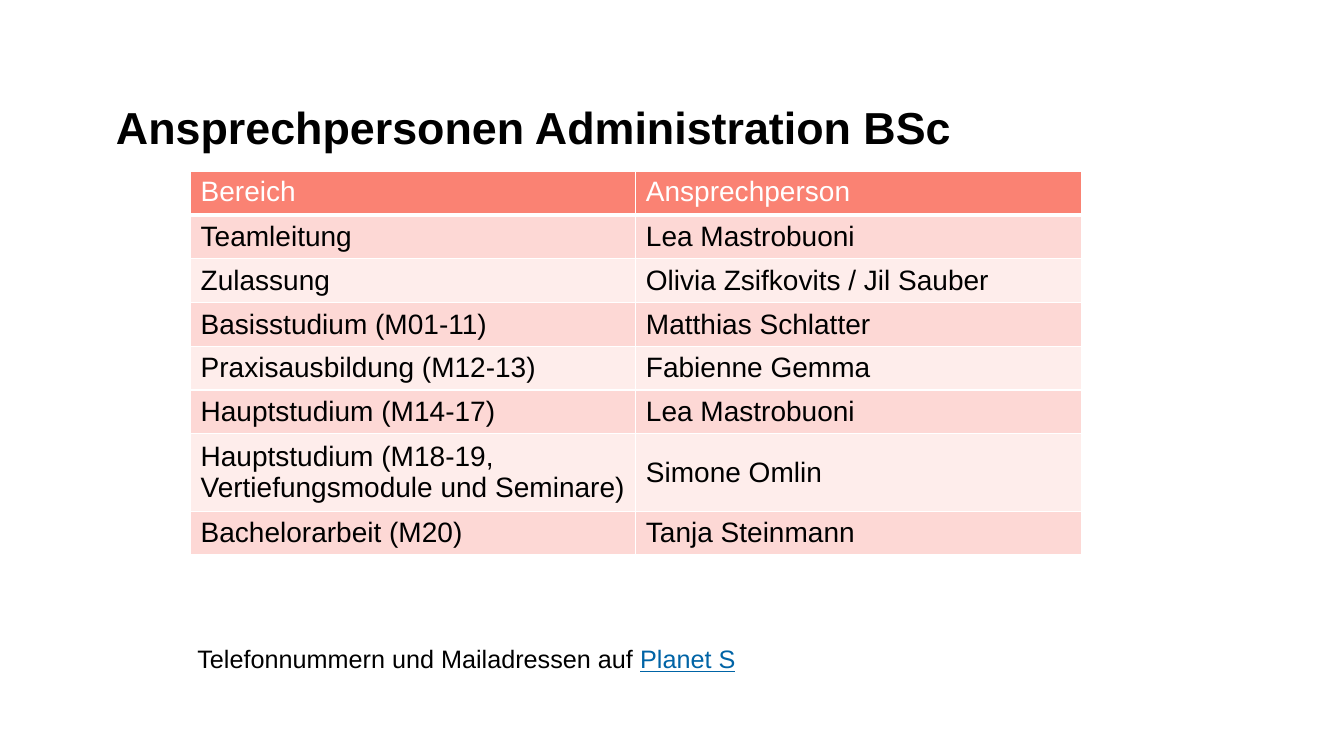
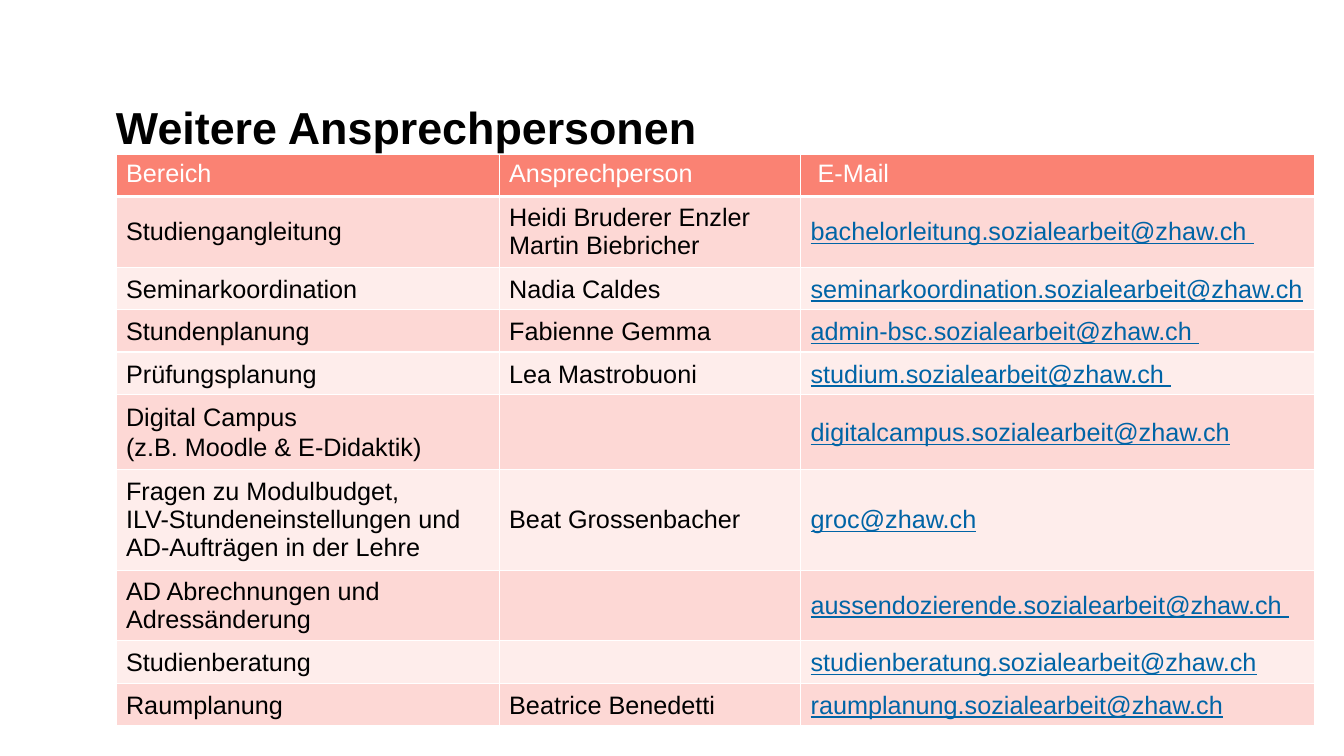
from lxml.etree import SubElement
from pptx import Presentation
from pptx.dml.color import RGBColor
from pptx.enum.text import MSO_ANCHOR
from pptx.oxml.ns import qn
from pptx.util import Inches, Pt

# Shared look
WIDTH, HEIGHT = Inches(13.33), Inches(7.5)
FONT = "Arial"
BLACK, WHITE, LINK = "000000", "FFFFFF", "0064A6"
HEADER_FILL = "FA8273"
BAND_FILLS = ("FDD8D5", "FEEDEB")
MARGIN = 8.63         # left edge of the content, percent of the slide width
LINE_FACTOR = 1.12    # height of a text line relative to its font size
LOOSE = 1.07          # line spacing of the airier rows


def across(percent):
    return round(WIDTH * percent / 100)


def down(percent):
    return round(HEIGHT * percent / 100)


def color(hex_code):
    return RGBColor.from_string(hex_code)


def write(paragraph, text, size=18, ink=BLACK, bold=False, underline=False):
    """Append text to a paragraph; a newline becomes a line break."""
    for number, line in enumerate(text.split("\n")):
        if number:
            paragraph.add_line_break()
        run = paragraph.add_run()
        run.text = line
        run.font.name = FONT
        run.font.size = Pt(size)
        run.font.bold = bold
        run.font.underline = underline
        run.font.color.rgb = color(ink)


def add_text_line(slide, left, top, width, height, inset=None):
    box = slide.shapes.add_textbox(across(left), down(top), across(width), down(height))
    frame = box.text_frame
    frame.word_wrap = True
    if inset is not None:
        frame.margin_left = frame.margin_right = inset
        frame.margin_top = frame.margin_bottom = inset
    return frame.paragraphs[0]


def add_titled_slide(deck, title):
    slide = deck.slides.add_slide(deck.slide_layouts[6])
    paragraph = add_text_line(slide, MARGIN, 14.27, 79.67, 12.13, inset=0)
    paragraph.line_spacing = 0.85
    write(paragraph, title, size=32, bold=True)
    return slide


def style_cell(cell, fill, bottom_width=1):
    """White borders first, then the fill, as the file format orders them."""
    properties = cell._tc.get_or_add_tcPr()
    for side, width in (("L", 1), ("R", 1), ("T", 1), ("B", bottom_width)):
        border = SubElement(properties, qn(f"a:ln{side}"), w=str(Pt(width)))
        SubElement(SubElement(border, qn("a:solidFill")), qn("a:srgbClr"), val=WHITE)
    cell.fill.solid()
    cell.fill.fore_color.rgb = color(fill)


def fill_cell(cell, text, size, spacing):
    cell.vertical_anchor = MSO_ANCHOR.MIDDLE
    paragraph = cell.text_frame.paragraphs[0]
    paragraph.line_spacing = spacing
    if text:
        is_mail = "@" in text
        write(paragraph, text, size, LINK if is_mail else BLACK, underline=is_mail)


def add_contacts(slide, left, top, columns, headings, contacts, size, header_height):
    """Each contact row is (text lines, line spacing, cell texts)."""
    heights = [down(header_height)]
    for lines, spacing, _ in contacts:
        heights.append(Inches(0.1) + Pt(lines * size * LINE_FACTOR * spacing))
    frame = slide.shapes.add_table(len(heights), len(columns), across(left), down(top),
                                   across(sum(columns)), sum(heights))
    table = frame.table
    table.first_row = table.horz_banding = False
    for column, width in zip(table.columns, columns):
        column.width = across(width)
    for row, height in zip(table.rows, heights):
        row.height = height

    for column, heading in enumerate(headings):
        cell = table.cell(0, column)
        style_cell(cell, HEADER_FILL, bottom_width=3)
        write(cell.text_frame.paragraphs[0], heading, size, WHITE)
    for row, (_, spacing, texts) in enumerate(contacts, start=1):
        for column, text in enumerate(texts):
            cell = table.cell(row, column)
            style_cell(cell, BAND_FILLS[(row - 1) % 2])
            fill_cell(cell, text, size, spacing)


ADMINISTRATION = [
    (1, 1.0, ("Teamleitung", "Lea Mastrobuoni")),
    (1, 1.0, ("Zulassung", "Olivia Zsifkovits / Jil Sauber")),
    (1, 1.0, ("Basisstudium (M01-11)", "Matthias Schlatter")),
    (1, 1.0, ("Praxisausbildung (M12-13)", "Fabienne Gemma")),
    (1, 1.0, ("Hauptstudium (M14-17)", "Lea Mastrobuoni")),
    (2, 1.0, ("Hauptstudium (M18-19, Vertiefungsmodule und Seminare)", "Simone Omlin")),
    (1, 1.0, ("Bachelorarbeit (M20)", "Tanja Steinmann")),
]

FURTHER = [
    (2, 1.0, ("Studiengangleitung", "Heidi Bruderer Enzler\nMartin Biebricher",
              "bachelorleitung.sozialearbeit@zhaw.ch ")),
    (1, LOOSE, ("Seminarkoordination", "Nadia Caldes",
                "seminarkoordination.sozialearbeit@zhaw.ch")),
    (1, LOOSE, ("Stundenplanung", "Fabienne Gemma", "admin-bsc.sozialearbeit@zhaw.ch ")),
    (1, LOOSE, ("Prüfungsplanung", "Lea Mastrobuoni", "studium.sozialearbeit@zhaw.ch ")),
    (2, LOOSE, ("Digital Campus\n(z.B. Moodle & E-Didaktik)", "",
                "digitalcampus.sozialearbeit@zhaw.ch")),
    (3, 1.0, ("Fragen zu Modulbudget,\nILV-Stundeneinstellungen und AD-Aufträgen in der Lehre",
              "Beat Grossenbacher", "groc@zhaw.ch")),
    (2, 1.0, ("AD Abrechnungen und Adressänderung", "",
              "aussendozierende.sozialearbeit@zhaw.ch ")),
    (1, LOOSE, ("Studienberatung", "", "studienberatung.sozialearbeit@zhaw.ch")),
    (1, LOOSE, ("Raumplanung", "Beatrice Benedetti", "raumplanung.sozialearbeit@zhaw.ch")),
]


def main():
    deck = Presentation()
    deck.slide_width, deck.slide_height = WIDTH, HEIGHT

    # Administration contacts
    slide = add_titled_slide(deck, "Ansprechpersonen Administration BSc")
    add_contacts(slide, 14.18, 22.67, (33.13, 33.13), ("Bereich", "Ansprechperson"),
                 ADMINISTRATION, size=20, header_height=5.47)
    directory = add_text_line(slide, 13.95, 84.5, 63.24, 5.4)
    write(directory, "Telefonnummern und Mailadressen auf ")
    write(directory, "Planet S", ink=LINK, underline=True)

    # Further contacts
    slide = add_titled_slide(deck, "Weitere Ansprechpersonen")
    add_contacts(slide, MARGIN, 20.4, (28.51, 22.43, 38.26),
                 ("Bereich", "Ansprechperson", " E-Mail"),
                 FURTHER, size=18, header_height=5.6)

    deck.save("out.pptx")


if __name__ == "__main__":
    main()
